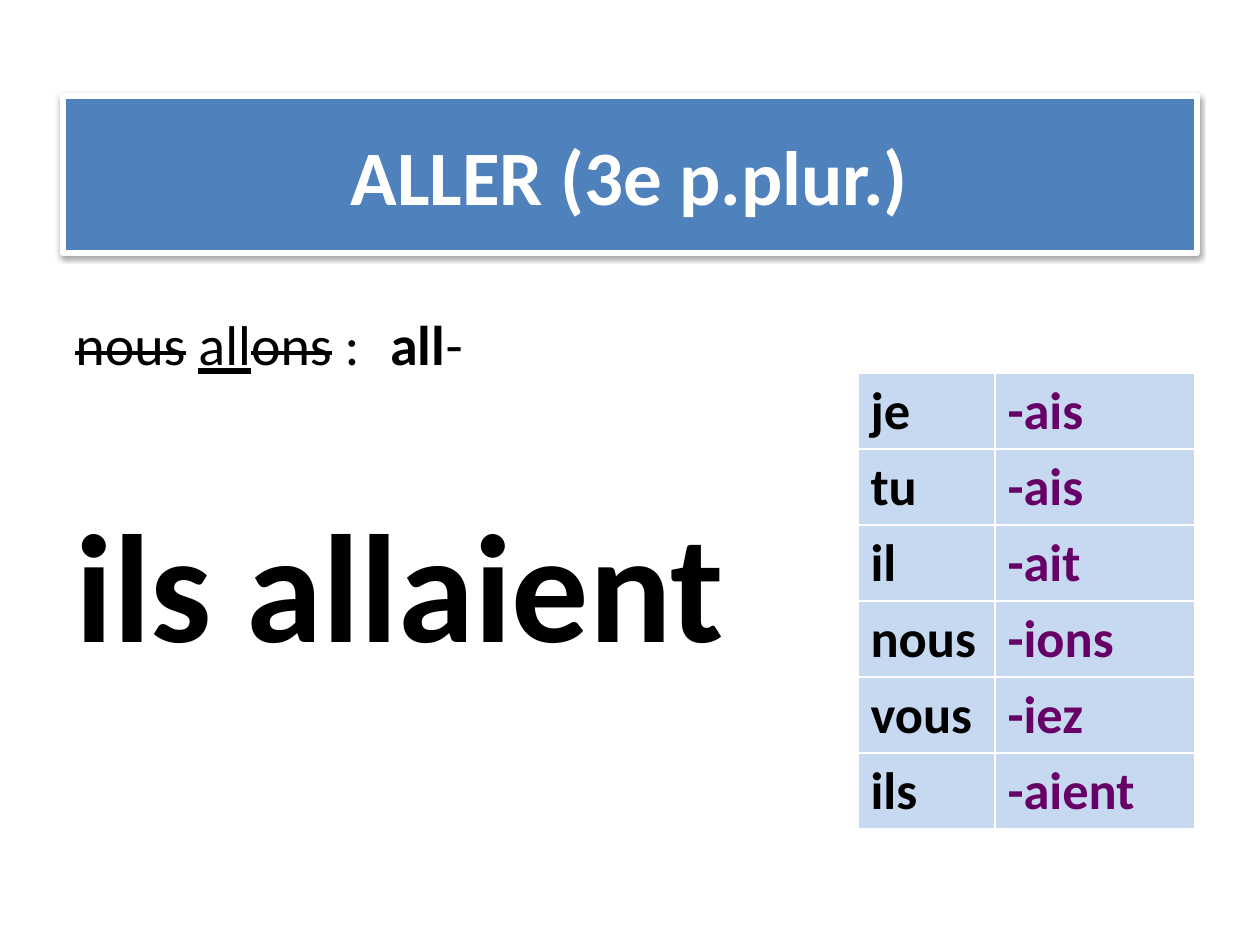
from dataclasses import dataclass
from lxml.etree import SubElement
from pptx import Presentation
from pptx.dml.color import RGBColor
from pptx.enum.shapes import MSO_SHAPE
from pptx.enum.text import MSO_ANCHOR, PP_ALIGN
from pptx.oxml import parse_xml
from pptx.oxml.ns import nsdecls, qn
from pptx.util import Pt

PX = 914400 / 126


@dataclass(frozen=True)
class Theme:
    font: str = "Calibri"
    white: str = "FFFFFF"
    black: str = "000000"
    banner: str = "4F81BD"
    cell: str = "C6D9F1"
    ending: str = "660066"
    title_size: int = 44
    stem_size: int = 32
    answer_size: int = 88
    table_size: int = 30


theme = Theme()


def px(*lengths):
    return [round(length * PX) for length in lengths]


def style(run, size, color, bold=False):
    run.font.name = theme.font
    run.font.size = Pt(size)
    run.font.bold = bold
    run.font.color.rgb = RGBColor.from_string(color)


prs = Presentation()
prs.slide_width, prs.slide_height = px(1260, 945)
slide = prs.slides.add_slide(prs.slide_layouts[6])

# Title banner with a soft shadow below
banner = slide.shapes.add_shape(MSO_SHAPE.RECTANGLE, *px(63, 96, 1134, 157))
banner.fill.solid()
banner.fill.fore_color.rgb = RGBColor.from_string(theme.banner)
banner.line.color.rgb = RGBColor.from_string(theme.white)
banner.line.width = Pt(3)
banner.shadow.inherit = False
effects = banner._element.spPr.find(qn("a:effectLst"))
effects.append(parse_xml(
    f'<a:outerShdw {nsdecls("a")} blurRad="40000" dist="20000" dir="5400000" rotWithShape="0">'
    f'<a:srgbClr val="{theme.black}"><a:alpha val="38000"/></a:srgbClr></a:outerShdw>'))
banner.text_frame.text = "ALLER (3e p.plur.)"
banner.text_frame.vertical_anchor = MSO_ANCHOR.MIDDLE
heading = banner.text_frame.paragraphs[0]
heading.alignment = PP_ALIGN.CENTER
style(heading.runs[0], theme.title_size, theme.white, bold=True)

# Stem taken from the "nous" form, then the conjugated answer
lesson = slide.shapes.add_textbox(*px(63, 303, 780, 400)).text_frame
lesson.word_wrap = True
stem = lesson.paragraphs[0]
for text, mark in [("nous", "strike"), (" ", None), ("all", "underline"),
                   ("ons", "strike"), (" : \t", None), ("all", "bold"), ("-", None)]:
    part = stem.add_run()
    part.text = text
    style(part, theme.stem_size, theme.black, bold=mark == "bold")
    if mark == "underline":
        part.font.underline = True
    elif mark == "strike":
        part._r.get_or_add_rPr().set("strike", "sngStrike")

answer = lesson.add_paragraph()
answer.text = "ils allaient"
answer.space_before = Pt(64)
style(answer.runs[0], theme.answer_size, theme.black, bold=True)

# Imperfect endings
endings = [("je", "-ais"), ("tu", "-ais"), ("il", "-ait"),
           ("nous", "-ions"), ("vous", "-iez"), ("ils", "-aient")]
table = slide.shapes.add_table(len(endings), 2, *px(858, 373, 337, 456)).table
for column, width in zip(table.columns, px(137, 200)):
    column.width = width
for row, pair in zip(table.rows, endings):
    row.height = px(76)[0]
    for cell, text, color in zip(row.cells, pair, (theme.black, theme.ending)):
        cell.text = text
        style(cell.text_frame.paragraphs[0].runs[0], theme.table_size, color, bold=True)
        cell.fill.solid()
        cell.fill.fore_color.rgb = RGBColor.from_string(theme.cell)
        properties = cell._tc.get_or_add_tcPr()
        for position, side in enumerate(("lnL", "lnR", "lnT", "lnB")):
            border = SubElement(properties, qn(f"a:{side}"), w=str(Pt(1)))
            solid = SubElement(border, qn("a:solidFill"))
            SubElement(solid, qn("a:srgbClr"), val=theme.white)
            properties.insert(position, border)

prs.save("out.pptx")
